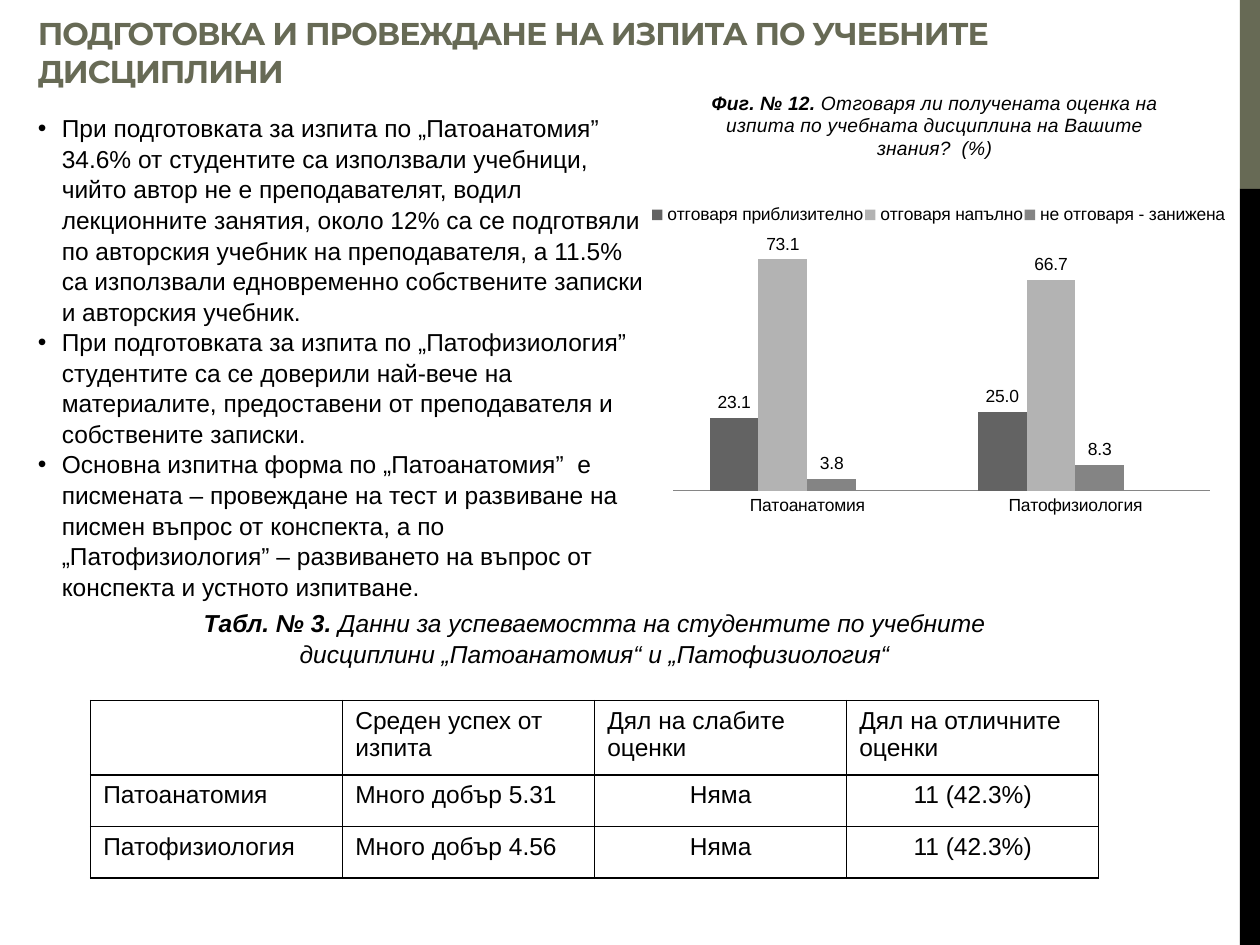
from lxml import etree
from pptx import Presentation, util as u
from pptx.chart.data import CategoryChartData
from pptx.dml.color import RGBColor
from pptx.enum import chart as ch, shapes, text
from pptx.oxml import parse_xml
from pptx.oxml.ns import nsdecls, qn

OLIVE = RGBColor(0x67, 0x6A, 0x55)
BLACK = RGBColor(0, 0, 0)
WHITE = RGBColor(255, 255, 255)
AXIS = RGBColor(0x86, 0x86, 0x86)
GRAYS = [RGBColor(v, v, v) for v in (0x63, 0xB3, 0x84)]
LEFT, CENTER = text.PP_ALIGN.LEFT, text.PP_ALIGN.CENTER
W, H = 10, 7.5

TITLE = "ПОДГОТОВКА И ПРОВЕЖДАНЕ НА ИЗПИТА ПО УЧЕБНИТЕ ДИСЦИПЛИНИ"
BULLETS = [
    "При подготовката за изпита по „Патоанатомия” 34.6% от студентите са използвали "
    "учебници, чийто автор не е преподавателят, водил лекционните занятия, около 12% са се "
    "подготвяли по авторския учебник на преподавателя, а 11.5%  са използвали едновременно "
    "собствените записки и авторския учебник.",
    "При подготовката за изпита по „Патофизиология” студентите са се доверили най-вече на "
    "материалите, предоставени от преподавателя и собствените записки.",
    "Основна изпитна форма по „Патоанатомия”  е писмената – провеждане на тест и развиване "
    "на писмен въпрос от конспекта, а по „Патофизиология” – развиването на въпрос от "
    "конспекта и устното изпитване.",
]
FIGURE = ("Фиг. № 12.", " Отговаря ли получената оценка на изпита по учебната дисциплина "
          "на Вашите знания?  (%)")
CAPTION = ("Табл. № 3.", " Данни за успеваемостта на студентите по учебните дисциплини "
           "„Патоанатомия“ и „Патофизиология“")
CATEGORIES = ["Патоанатомия", "Патофизиология"]
SERIES = [
    ("отговаря приблизително", (23.1, 25.0)),
    ("отговаря напълно", (73.1, 66.7)),
    ("не отговаря - занижена", (3.8, 8.3)),
    ("Series 4", (None, None)),  # empty slot that widens each group
]
ROWS = [
    ("", "Среден успех от изпита", "Дял на слабите оценки", "Дял на отличните оценки"),
    ("Патоанатомия", "Много добър 5.31", "Няма", "11 (42.3%)"),
    ("Патофизиология", "Много добър 4.56", "Няма", "11 (42.3%)"),
]
ROW_HEIGHTS = [0.59, 0.41, 0.41]


def box(*lengths):
    return [u.Inches(v) for v in lengths]


def place(sp, *lengths):
    sp.left, sp.top, sp.width, sp.height = box(*lengths)


def style(font, size, color=BLACK, name="Arial", bold=False, italic=False):
    font.size, font.name, font.bold, font.italic = u.Pt(size), name, bold, italic
    font.color.rgb = color


def write(p, content, align=LEFT, **fmt):
    p.alignment = align
    r = p.add_run()
    r.text = content
    style(r.font, **fmt)
    return r


def write_caption(p, parts, size):
    """Bold label followed by plain text, all italic and centred."""
    for part, bold in zip(parts, (True, False)):
        write(p, part, CENTER, size=size, bold=bold, italic=True)


def set_layout(parent, index, target=None, **shares):
    """Place a chart part by shares of the chart's size."""
    for old in parent.findall(qn("c:layout")):
        parent.remove(old)
    values = dict(layoutTarget=target) if target else {}
    values.update(xMode="edge", yMode="edge", **shares)
    inner = "".join(f'<c:{k} val="{v}"/>' for k, v in values.items())
    parent.insert(index, parse_xml(
        f'<c:layout {nsdecls("c")}><c:manualLayout>{inner}</c:manualLayout></c:layout>'))


def add_side_bars(s):
    for top, height, color in ((0, H / 5, OLIVE), (H / 5, H * 4 / 5, BLACK)):
        sp = s.shapes.add_shape(shapes.MSO_SHAPE.RECTANGLE, *box(9.84, top, W - 9.84, height))
        sp.shadow.inherit = False
        sp.fill.solid()
        sp.fill.fore_color.rgb = color
        sp.line.fill.background()


def fill_title(sp):
    place(sp, 0.2, 0.21, 9.61, 0.55)
    tf = sp.text_frame
    tf.vertical_anchor = text.MSO_ANCHOR.BOTTOM
    tf.auto_size = text.MSO_AUTO_SIZE.NONE
    r = write(tf.paragraphs[0], TITLE, size=18, color=OLIVE, name="Montserrat", bold=True)
    r.font._element.set("spc", "-60")


def fill_bullets(sp):
    place(sp, 0.2, 0.84, 5.12, 3.7)
    tf = sp.text_frame
    tf.auto_size = text.MSO_AUTO_SIZE.NONE
    for i, bullet in enumerate(BULLETS):
        p = tf.add_paragraph() if i else tf.paragraphs[0]
        write(p, bullet, size=14)
        p.space_before, p.line_spacing = u.Pt(0), 1.04
        pPr = p._p.get_or_add_pPr()
        pPr.set("marL", str(u.Inches(0.19)))
        pPr.set("indent", str(u.Inches(-0.19)))
        etree.SubElement(pPr, qn("a:buChar"), char="•")


def add_grade_table(s):
    tbl = s.shapes.add_table(len(ROWS), len(ROWS[0]), *box(0.72, 5.56, 8, 1.41)).table
    tbl.first_row = tbl.horz_banding = False
    for row, height in zip(tbl.rows, ROW_HEIGHTS):
        row.height = u.Inches(height)
    for i, row in enumerate(ROWS):
        for j, content in enumerate(row):
            cell = tbl.cell(i, j)
            cell.fill.solid()
            cell.fill.fore_color.rgb = WHITE
            if content:
                write(cell.text_frame.paragraphs[0], content,
                      CENTER if i and j > 1 else LEFT, size=14)
            tcPr = cell._tc.get_or_add_tcPr()
            for k, side in enumerate("LRTB"):
                tcPr.insert(k, parse_xml(
                    f'<a:ln{side} {nsdecls("a")} w="{u.Pt(1)}"><a:solidFill>'
                    f'<a:srgbClr val="{BLACK}"/></a:solidFill></a:ln{side}>'))


def add_table_caption(s):
    tf = s.shapes.add_textbox(*box(0.98, 4.77, 7.48, 0.57)).text_frame
    tf.word_wrap = True
    tf.margin_left = tf.margin_right = u.Inches(0.2)
    p = tf.paragraphs[0]
    write_caption(p, CAPTION, 14)
    p.line_spacing = 1.04


def add_grade_chart(s):
    data = CategoryChartData(number_format="0.0")
    data.categories = CATEGORIES
    for name, values in SERIES:
        data.add_series(name, values)
    chart = s.shapes.add_chart(ch.XL_CHART_TYPE.COLUMN_CLUSTERED,
                               *box(5.16, 0.52, 4.59, 4.02), data).chart
    style(chart.font, 10)

    write_caption(chart.chart_title.text_frame.paragraphs[0], FIGURE, 11)
    chart.chart_title.include_in_layout = False
    set_layout(chart.chart_title._element, 1, x=0.1, y=0.04)

    chart.has_legend = True
    legend = chart.legend
    legend.position = ch.XL_LEGEND_POSITION.TOP
    legend.include_in_layout = False
    style(legend.font, 10)
    legend._element.insert(1, parse_xml(
        f'<c:legendEntry {nsdecls("c")}><c:idx val="{len(SERIES) - 1}"/>'
        '<c:delete val="1"/></c:legendEntry>'))
    set_layout(legend._element, 2, x=0, y=0.27, w=1, h=0.05)

    plot = chart.plots[0]
    set_layout(chart._chartSpace.chart.plotArea, 0, "inner", x=0.04, y=0.34, w=0.93, h=0.5)
    plot.gap_width, plot.overlap = 150, 0
    plot.vary_by_categories = False
    plot.has_data_labels = True
    labels = plot.data_labels
    labels.show_value = True
    labels.number_format, labels.number_format_is_linked = "0.0", False
    labels.position = ch.XL_LABEL_POSITION.OUTSIDE_END
    style(labels.font, 10)
    for series, color in zip(plot.series, GRAYS):
        series.format.fill.solid()
        series.format.fill.fore_color.rgb = color

    axis = chart.value_axis
    axis.minimum_scale, axis.maximum_scale = 0, 80
    axis.has_major_gridlines = axis.visible = False
    axis = chart.category_axis
    axis.major_tick_mark = ch.XL_TICK_MARK.NONE
    axis.format.line.color.rgb = AXIS
    style(axis.tick_labels.font, 10)


def main():
    prs = Presentation()
    prs.slide_width, prs.slide_height = box(W, H)
    s = prs.slides.add_slide(prs.slide_layouts[1])
    add_side_bars(s)
    fill_title(s.shapes.title)
    fill_bullets(s.placeholders[1])
    add_grade_table(s)
    add_table_caption(s)
    add_grade_chart(s)
    prs.save("out.pptx")


if __name__ == "__main__":
    main()
